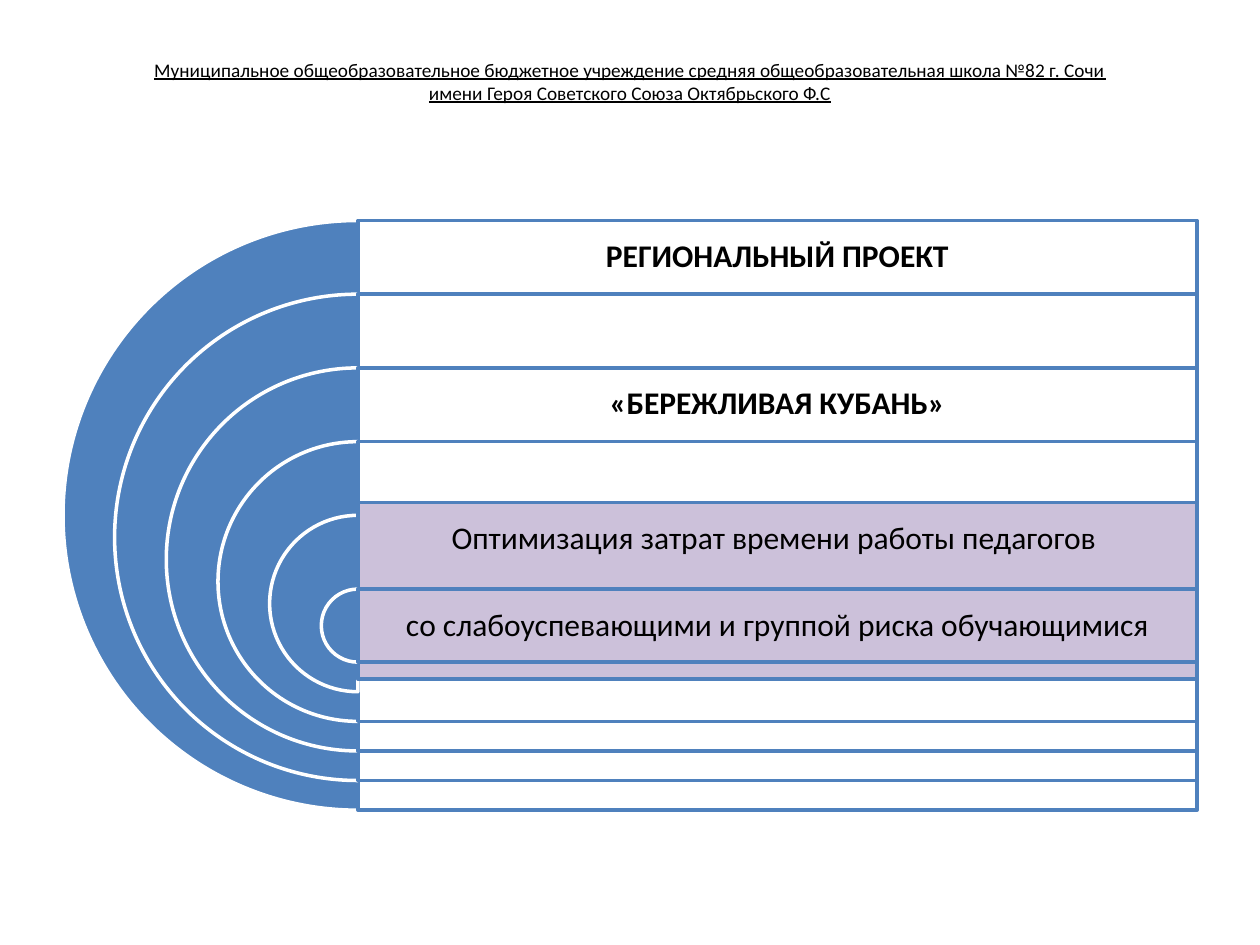
from dataclasses import dataclass

from lxml import etree
from pptx import Presentation
from pptx.dml.color import RGBColor
from pptx.enum.shapes import MSO_SHAPE
from pptx.enum.text import MSO_ANCHOR, PP_ALIGN
from pptx.oxml.ns import qn
from pptx.util import Inches, Pt

PIE, RECTANGLE = MSO_SHAPE.PIE, MSO_SHAPE.RECTANGLE
TOP, MIDDLE = MSO_ANCHOR.TOP, MSO_ANCHOR.MIDDLE
CENTER = PP_ALIGN.CENTER

COLORS = {"blue": "4F81BD", "white": "FFFFFF", "lilac": "CCC1DA", "black": "000000"}
FONT = "Calibri"
SLIDE_WIDTH, SLIDE_HEIGHT = 10, 7.5
MARGIN = SLIDE_WIDTH * 0.05

TARGET_TOP = 1.75
OUTER_DIAMETER = 4.68
ROW_HEIGHT = OUTER_DIAMETER / 8
DIAMETER_STEP = 0.82
AXIS = MARGIN + OUTER_DIAMETER / 2
BAR_WIDTH = SLIDE_WIDTH - MARGIN - AXIS

TITLE_LINES = (
    "Муниципальное общеобразовательное бюджетное учреждение средняя "
    "общеобразовательная школа №82 г. Сочи",
    "имени Героя Советского Союза Октябрьского Ф.С",
)


@dataclass(frozen=True)
class Level:
    text: str = ""
    bold: bool = False
    fill: str = "white"
    opacity: int = 90
    bar_shift: float = 0


LEVELS = (
    Level("РЕГИОНАЛЬНЫЙ ПРОЕКТ", bold=True),
    Level(),
    Level("«БЕРЕЖЛИВАЯ КУБАНЬ»", bold=True),
    Level(),
    Level("Оптимизация затрат времени работы педагогов ",
          fill="lilac", opacity=100, bar_shift=-0.1),
    Level("со слабоуспевающими и группой риска обучающимися", fill="lilac"),
)


def rgb(name: str) -> RGBColor:
    return RGBColor.from_string(COLORS[name])


def add_filled_shape(slide, kind, left: float, top: float, width: float,
                     height: float, fill: str, line: str, opacity: int = 100):
    shape = slide.shapes.add_shape(
        kind, Inches(left), Inches(top), Inches(width), Inches(height))
    shape.shadow.inherit = False
    shape.fill.solid()
    shape.fill.fore_color.rgb = rgb(fill)
    shape.line.color.rgb = rgb(line)
    shape.line.width = Pt(2)
    if opacity < 100:
        color = shape.fill._xPr.find(qn("a:solidFill"))[0]
        etree.SubElement(color, qn("a:alpha")).set("val", str(opacity * 1000))
    return shape


def add_text(slide, left: float, top: float, width: float, height: float,
             lines: tuple[str, ...], size: int, anchor, inset: float,
             line_spacing: float = 1, bold: bool = False,
             underline: bool = False) -> None:
    box = slide.shapes.add_textbox(
        Inches(left), Inches(top), Inches(width), Inches(height))
    frame = box.text_frame
    frame.word_wrap = True
    frame.vertical_anchor = anchor
    frame.margin_left = frame.margin_right = Inches(inset)
    frame.margin_top = frame.margin_bottom = Inches(inset)
    paragraph = frame.paragraphs[0]
    paragraph.alignment = CENTER
    paragraph.line_spacing = line_spacing
    for index, line in enumerate(lines):
        if index:
            paragraph.add_line_break()
        run = paragraph.add_run()
        run.text = line
        font = run.font
        font.name, font.size = FONT, Pt(size)
        font.bold, font.underline = bold, underline
        font.color.rgb = rgb("black")


def add_level(slide, index: int, level: Level) -> None:
    """Add one half disc with the bar that starts at its vertical axis."""
    diameter = OUTER_DIAMETER - index * DIAMETER_STEP
    top = TARGET_TOP + index * ROW_HEIGHT
    half_disc = add_filled_shape(slide, PIE, AXIS - diameter / 2, top,
                                 diameter, diameter, "blue", "white")
    half_disc.adjustments[0] = 54
    half_disc.adjustments[1] = 162

    bar_top = top + level.bar_shift
    add_filled_shape(slide, RECTANGLE, AXIS, bar_top, BAR_WIDTH, diameter,
                     level.fill, "blue", level.opacity)
    if level.text:
        add_text(slide, AXIS, bar_top, BAR_WIDTH, ROW_HEIGHT, (level.text,),
                 18, MIDDLE, 0.07, line_spacing=0.9, bold=level.bold)


def main() -> None:
    presentation = Presentation()
    presentation.slide_width = Inches(SLIDE_WIDTH)
    presentation.slide_height = Inches(SLIDE_HEIGHT)
    slide = presentation.slides.add_slide(presentation.slide_layouts[6])
    add_text(slide, MARGIN, 0.3, SLIDE_WIDTH - 2 * MARGIN, 1.25, TITLE_LINES,
             11, TOP, 0.16, underline=True)
    for index, level in enumerate(LEVELS):
        add_level(slide, index, level)
    presentation.save("out.pptx")


if __name__ == "__main__":
    main()
